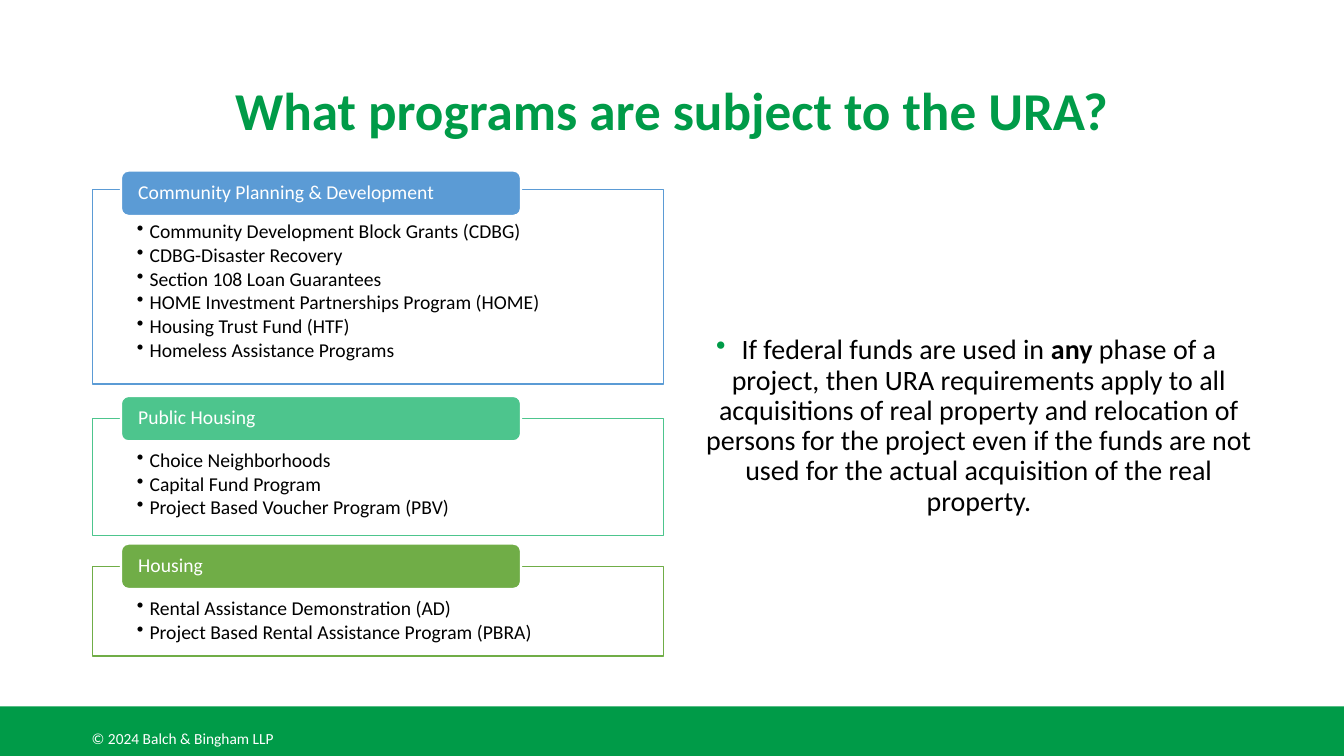
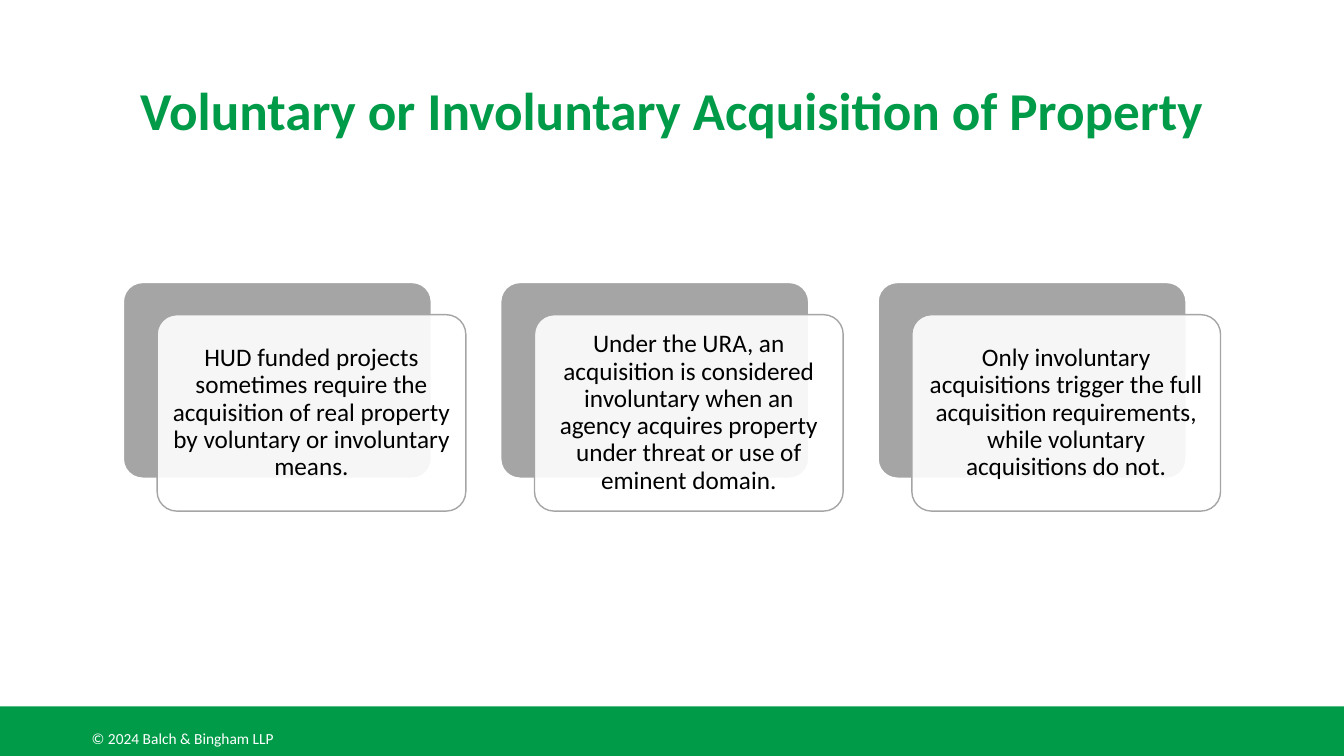
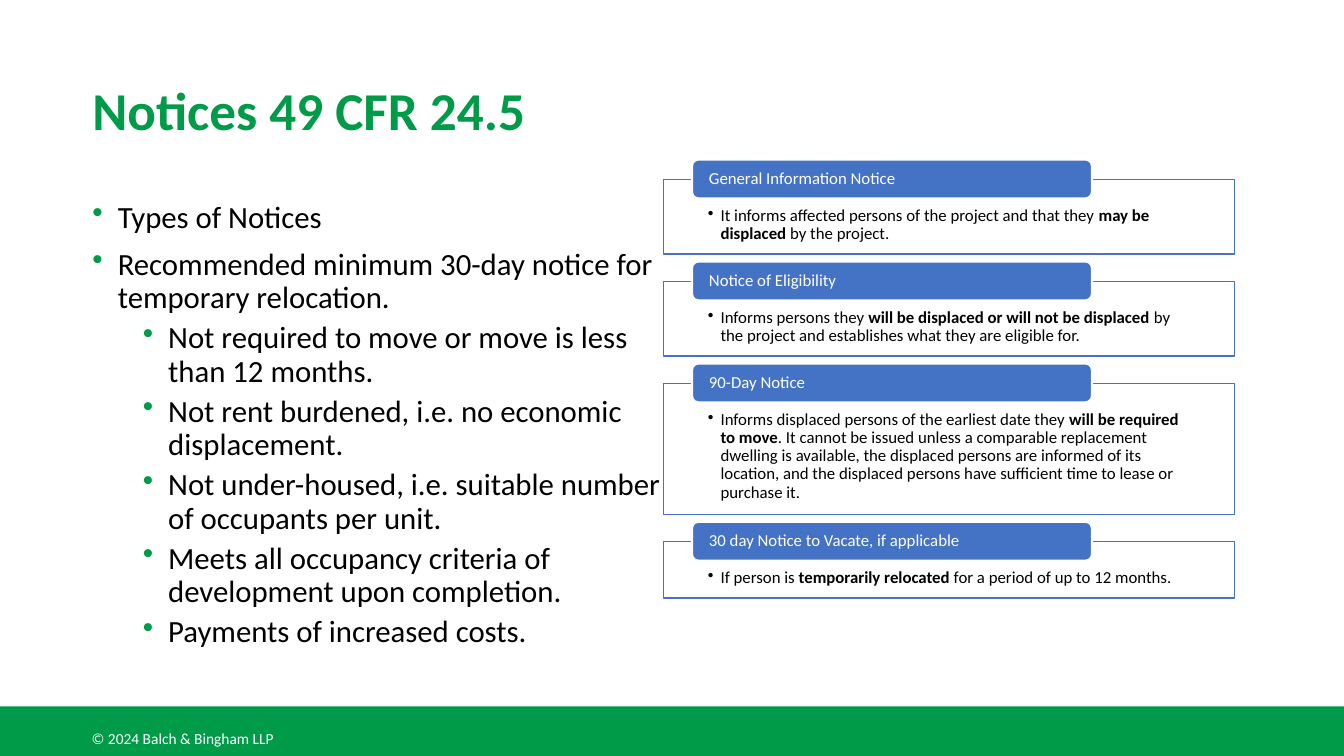
from dataclasses import dataclass, replace

import lxml.etree
import pptx
import pptx.dml.color
import pptx.enum.shapes
import pptx.enum.text
import pptx.oxml.ns
import pptx.util

Cm = pptx.util.Cm
Pt = pptx.util.Pt
qn = pptx.oxml.ns.qn
SHAPE = pptx.enum.shapes.MSO_SHAPE
ALIGN = pptx.enum.text.PP_ALIGN
ANCHOR = pptx.enum.text.MSO_ANCHOR

GREEN, WHITE, BLACK, GRAY = "009B48", "FFFFFF", "000000", "A5A5A5"
BLUE, MINT, LEAF, NAVY = "5B9BD5", "4DC58D", "70AD47", "4472C4"
SLIDE_W, SLIDE_H = 33.87, 19.05
MARGIN, COLUMN_W = 2.33, 14.4


def rgb(hex_color):
    return pptx.dml.color.RGBColor.from_string(hex_color)


@dataclass(frozen=True)
class ParagraphStyle:
    """Sizes and spacing in points, indents in centimetres."""
    size: float
    color: str = BLACK
    bold: bool = False
    align: ALIGN = ALIGN.LEFT
    line_spacing: float = 0.9
    before: float = 0
    after: float = 0
    indent: float = 0
    hanging: float = 0
    bullet_color: str = BLACK


TITLE = ParagraphStyle(38, GREEN, bold=True)
FOOTER = ParagraphStyle(11, WHITE, line_spacing=1)
POINT = ParagraphStyle(22, before=10, indent=0.64, hanging=0.64, bullet_color=GREEN)
SUBPOINT = replace(POINT, before=5, indent=1.91)
REMARK = replace(POINT, size=20, align=ALIGN.CENTER)
CARD = ParagraphStyle(18, align=ALIGN.CENTER)


class Deck:
    font = "Calibri"

    def __init__(self):
        self.presentation = pptx.Presentation()
        self.presentation.slide_width = Cm(SLIDE_W)
        self.presentation.slide_height = Cm(SLIDE_H)
        self.slide = None

    def new_slide(self, title, align=ALIGN.CENTER):
        """Start a slide with the shared footer band and title."""
        self.slide = self.presentation.slides.add_slide(
            self.presentation.slide_layouts[6])
        self.shape(SHAPE.RECTANGLE, 0, 17.8, SLIDE_W, 1.25, GREEN)
        self.text(2.06, 18.24, 5.3, 0.74, [("© 2024 Balch & Bingham LLP", FOOTER)],
                  insets=(0.25, 0.13, 0.25, 0.13))
        self.text(MARGIN, 1.02, 29.21, 3.68, [(title, replace(TITLE, align=align))],
                  anchor=ANCHOR.MIDDLE)

    def shape(self, kind, left, top, width, height, fill, line=None, line_width=1,
              opacity=100):
        shape = self.slide.shapes.add_shape(
            kind, Cm(left), Cm(top), Cm(width), Cm(height))
        shape.shadow.inherit = False
        shape.fill.solid()
        shape.fill.fore_color.rgb = rgb(fill)
        if opacity < 100:
            color = shape.fill._xPr.find(qn("a:solidFill"))[0]
            lxml.etree.SubElement(color, qn("a:alpha"), val=str(opacity * 1000))
        if line:
            shape.line.color.rgb = rgb(line)
            shape.line.width = Pt(line_width)
        else:
            shape.line.fill.background()
        return shape

    def text(self, left, top, width, height, lines, **frame_options):
        box = self.slide.shapes.add_textbox(
            Cm(left), Cm(top), Cm(width), Cm(height))
        self.set_lines(box, lines, **frame_options)

    def set_lines(self, shape, lines, anchor=ANCHOR.TOP, insets=(0, 0, 0, 0)):
        """Fill a shape with (text, style) lines; ** switches bold on and off."""
        frame = shape.text_frame
        frame.word_wrap = True
        frame.vertical_anchor = anchor
        (frame.margin_left, frame.margin_top,
         frame.margin_right, frame.margin_bottom) = map(Cm, insets)
        for index, (text, style) in enumerate(lines):
            paragraph = frame.add_paragraph() if index else frame.paragraphs[0]
            if style.hanging:
                self.add_bullet(paragraph, style)
            paragraph.alignment = style.align
            paragraph.line_spacing = style.line_spacing
            paragraph.space_before = Pt(style.before if index else 0)
            paragraph.space_after = Pt(style.after)
            for part, words in enumerate(text.split("**")):
                run = paragraph.add_run()
                run.text = words
                run.font.name = self.font
                run.font.size = Pt(style.size)
                run.font.bold = style.bold or part % 2 == 1
                run.font.color.rgb = rgb(style.color)

    def add_bullet(self, paragraph, style):
        properties = paragraph._p.get_or_add_pPr()
        properties.set("marL", str(Cm(style.indent)))
        properties.set("indent", str(-Cm(style.hanging)))
        color = lxml.etree.SubElement(properties, qn("a:buClr"))
        lxml.etree.SubElement(color, qn("a:srgbClr"), val=style.bullet_color)
        lxml.etree.SubElement(properties, qn("a:buChar"), char="•")

    def panel(self, left, header_top, header_h, body_top, body_h, color, size,
              heading, items):
        """Draw an outlined list with a heading tab across its top edge."""
        item_style = ParagraphStyle(size, after=size / 8, indent=0.32, hanging=0.32)
        body = self.shape(SHAPE.RECTANGLE, left, body_top, COLUMN_W, body_h,
                          WHITE, color, opacity=90)
        self.set_lines(body, [(item, item_style) for item in items],
                       insets=(1.12, size * 0.058, 1.12, 0.25))
        tab = self.shape(SHAPE.ROUNDED_RECTANGLE, left + 0.72, header_top,
                         10.08, header_h, color, WHITE, 1.5)
        self.set_lines(tab, [(heading, ParagraphStyle(size, WHITE))],
                       anchor=ANCHOR.MIDDLE, insets=(0.38, 0, 0.38, 0))

    def card(self, left, top, text):
        """Draw a text card in front of an offset gray card."""
        size = (7.78, 4.95)
        back = self.shape(SHAPE.ROUNDED_RECTANGLE, left, top, *size,
                          GRAY, WHITE, 1.5)
        front = self.shape(SHAPE.ROUNDED_RECTANGLE, left + 0.86, top + 0.82, *size,
                           WHITE, GRAY, opacity=90)
        for layer in (back, front):
            layer.adjustments[0] = 0.1
        self.set_lines(front, [(text, CARD)], anchor=ANCHOR.MIDDLE,
                       insets=(0.18,) * 4)


def programs_slide(deck):
    deck.new_slide("What programs are subject to the URA?")
    deck.text(17.15, 4.7, COLUMN_W, 12.09, [(
        "If federal funds are used in **any** phase of a project, then URA "
        "requirements apply to all acquisitions of real property and relocation "
        "of persons for the project even if the funds are not used for the actual "
        "acquisition of the real property.", REMARK)], anchor=ANCHOR.MIDDLE)
    programs = [
        (4.3, 4.78, 4.9, BLUE, "Community Planning & Development", [
            "Community Development Block Grants (CDBG)",
            "CDBG-Disaster Recovery",
            "Section 108 Loan Guarantees",
            "HOME Investment Partnerships Program (HOME)",
            "Housing Trust Fund (HTF)",
            "Homeless Assistance Programs"]),
        (9.98, 10.54, 2.95, MINT, "Public Housing", [
            "Choice Neighborhoods",
            "Capital Fund Program",
            "Project Based Voucher Program (PBV)"]),
        (13.7, 14.27, 2.26, LEAF, "Housing", [
            "Rental Assistance Demonstration (AD)",
            "Project Based Rental Assistance Program (PBRA)"]),
    ]
    for header_top, body_top, body_h, color, heading, items in programs:
        deck.panel(MARGIN, header_top, 1.14, body_top, body_h, color, 14,
                   heading, items)


def acquisition_slide(deck):
    deck.new_slide("Voluntary or Involuntary Acquisition of Property")
    statements = [
        "HUD funded projects sometimes require the acquisition of real property "
        "by voluntary or involuntary means.",
        "Under the URA, an acquisition is considered involuntary when an agency "
        "acquires property under threat or use of eminent domain.",
        "Only involuntary acquisitions trigger the full acquisition requirements, "
        "while voluntary acquisitions do not.",
    ]
    for column, statement in enumerate(statements):
        deck.card(3.1 + column * 9.51, 7.11, statement)


def notices_slide(deck):
    deck.new_slide("Notices 49 CFR 24.5", ALIGN.LEFT)
    deck.text(MARGIN, 5.08, COLUMN_W, 12.09, [
        ("Types of Notices", POINT),
        ("Recommended minimum 30-day notice for temporary relocation.", POINT),
        ("Not required to move or move is less than 12 months.", SUBPOINT),
        ("Not rent burdened, i.e. no economic displacement.", SUBPOINT),
        ("Not under-housed, i.e. suitable number of occupants per unit.", SUBPOINT),
        ("Meets all occupancy criteria of development upon completion.", SUBPOINT),
        ("Payments of increased costs.", SUBPOINT),
    ])
    notices = [
        (1.88, "General Information Notice",
         "It informs affected persons of the project and that they **may be "
         "displaced** by the project."),
        (1.88, "Notice of Eligibility",
         "Informs persons they **will be displaced or will not be displaced** by "
         "the project and establishes what they are eligible for."),
        (3.3, "90-Day Notice",
         "Informs displaced persons of the earliest date they **will be required "
         "to move**. It cannot be issued unless a comparable replacement dwelling "
         "is available, the displaced persons are informed of its location, and "
         "the displaced persons have sufficient time to lease or purchase it."),
        (1.42, "30 day Notice to Vacate, if applicable",
         "If person is **temporarily relocated** for a period of up to 12 months."),
    ]
    header_top, header_rise, gap = 4.02, 0.5, 0.19
    for body_h, heading, meaning in notices:
        body_top = header_top + header_rise
        deck.panel(16.72, header_top, 0.98, body_top, body_h, NAVY, 12,
                   heading, [meaning])
        header_top = body_top + body_h + gap


def main():
    deck = Deck()
    programs_slide(deck)
    acquisition_slide(deck)
    notices_slide(deck)
    deck.presentation.save("out.pptx")


if __name__ == "__main__":
    main()
